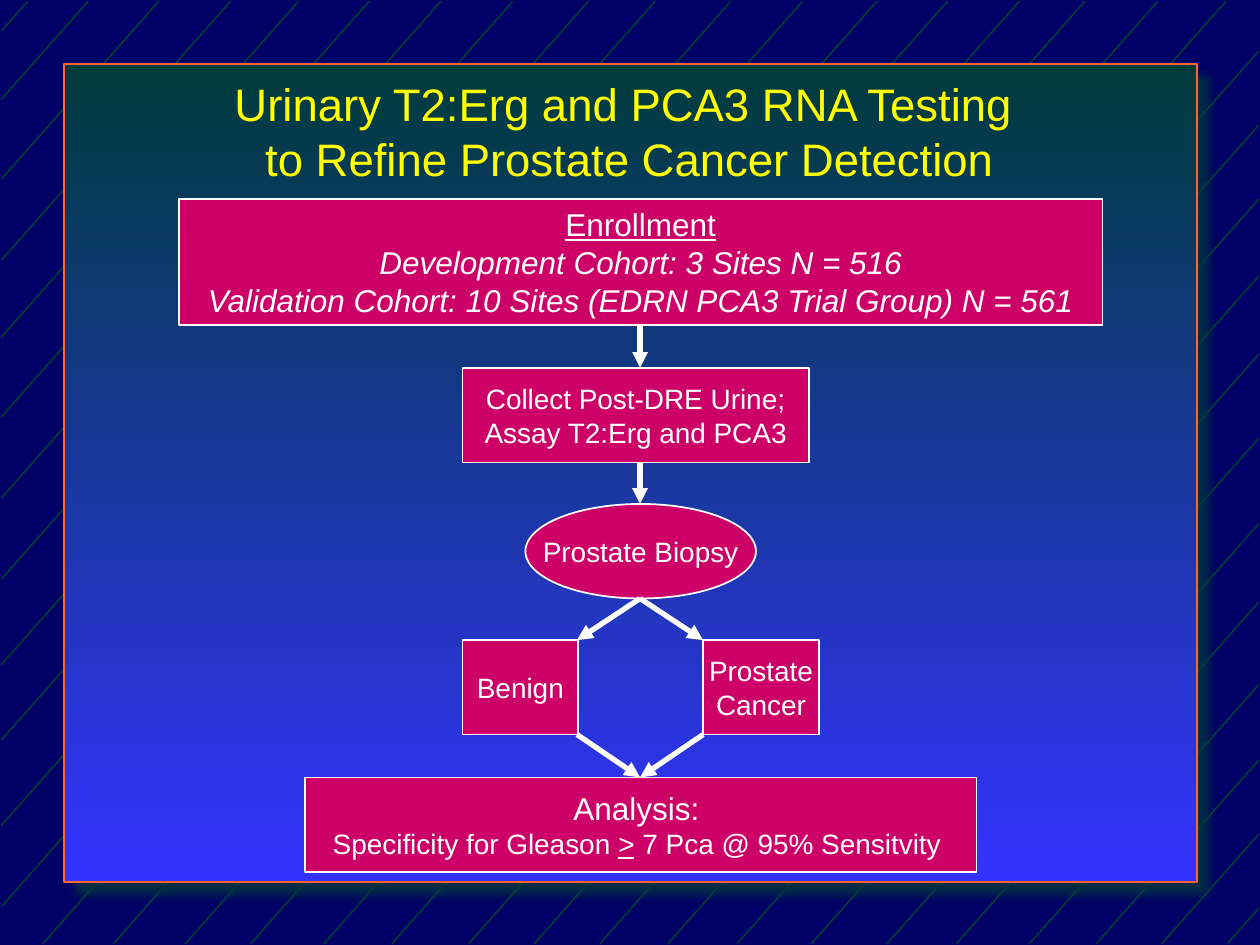
from dataclasses import dataclass

from lxml.etree import SubElement
from pptx import Presentation
from pptx.dml.color import RGBColor as RGB
from pptx.enum.shapes import MSO_CONNECTOR as CONN, MSO_SHAPE as SHAPE
from pptx.enum.text import MSO_ANCHOR as ANCHOR, PP_ALIGN as ALIGN
from pptx.oxml.ns import qn
from pptx.util import Inches, Pt


@dataclass(frozen=True)
class Theme:
    font: str = "Arial"
    navy: str = "000066"
    teal: str = "003B3B"
    blue: str = "3333FF"
    orange: str = "FF6633"
    yellow: str = "FFFF00"
    pink: str = "CC0066"
    white: str = "FFFFFF"
    title: int = 26
    large: int = 18
    body: int = 16
    thin: int = 1
    thick: int = 3


T = Theme()

# Where each hatch line meets the top edge, extended past the right side
HATCH_X = [0.22, 0.7, 1.26, 1.83, 2.37, 2.93, 3.5, 4.07, 4.67, 5.2,
           5.8, 6.37, 6.96, 7.52, 8.09, 8.61, 9.19, 9.73, 10.34, 10.86,
           11.38, 11.92, 12.47, 13.06, 13.66, 14.21, 14.79, 15.32, 15.84, 16.36]
HATCH_SLOPE = 1.13
EDGE, RIGHT, BOTTOM = 0.01, 9.99, 7.49


def add_line(slide, start, end, color, width, arrow=False):
    ends = [Inches(v) for v in (*start, *end)]
    line = slide.shapes.add_connector(CONN.STRAIGHT, *ends)
    line.line.color.rgb = RGB.from_string(color)
    line.line.width = Pt(width)
    spPr = line._element.spPr
    if arrow:
        SubElement(spPr.find(qn("a:ln")), qn("a:tailEnd"), type="triangle")
    SubElement(spPr, qn("a:effectLst"))


def add_hatching(slide):
    for x in HATCH_X:
        x1 = min(x, RIGHT)
        y1 = EDGE + (x - x1) * HATCH_SLOPE
        y2 = min(EDGE + (x - EDGE) * HATCH_SLOPE, BOTTOM)
        x2 = x - (y2 - EDGE) / HATCH_SLOPE
        add_line(slide, (x1, y1), (x2, y2), T.teal, T.thin)


def add_outlined(slide, kind, box, outline):
    sp = slide.shapes.add_shape(kind, *[Inches(v) for v in box])
    sp.line.color.rgb = RGB.from_string(outline)
    sp.line.width = Pt(T.thin)
    sp.shadow.inherit = False
    return sp


def add_panel(slide):
    sp = add_outlined(slide, SHAPE.RECTANGLE, (0.51, 0.51, 8.99, 6.49), T.orange)
    sp.fill.gradient()
    sp.fill.gradient_angle = 270
    for stop, color, pos in zip(sp.fill.gradient_stops, (T.teal, T.blue), (0, 1)):
        stop.color.rgb = RGB.from_string(color)
        stop.position = pos
    # Soft shadow to the lower right
    effects = sp._element.spPr.find(qn("a:effectLst"))
    shadow = SubElement(effects, qn("a:outerShdw"), blurRad=str(Pt(5)),
                        dist=str(Pt(9.9)), dir=str(45 * 60000),
                        algn="ctr", rotWithShape="0")
    color = SubElement(shadow, qn("a:srgbClr"), val=T.teal)
    SubElement(color, qn("a:alpha"), val="75000")


def write(tf, paragraphs, color):
    """Each paragraph is (size, run, ...); a run is (text, style letters)."""
    tf.vertical_anchor = ANCHOR.MIDDLE
    for i, (size, *runs) in enumerate(paragraphs):
        p = tf.add_paragraph() if i else tf.paragraphs[0]
        p.alignment = ALIGN.CENTER
        for text, style in runs:
            r = p.add_run()
            r.text = text
            r.font.name = T.font
            r.font.size = Pt(size)
            r.font.color.rgb = RGB.from_string(color)
            r.font.italic = "i" in style
            r.font.underline = "u" in style


def add_title(slide, *lines):
    box = [Inches(v) for v in (0.75, 0.5, 8.5, 1.08)]
    tf = slide.shapes.add_textbox(*box).text_frame
    tf.word_wrap = True
    write(tf, [(T.title, (line, "")) for line in lines], T.yellow)


def add_step(slide, box, *paragraphs, kind=SHAPE.RECTANGLE):
    sp = add_outlined(slide, kind, box, T.white)
    sp.fill.solid()
    sp.fill.fore_color.rgb = RGB.from_string(T.pink)
    sp.text_frame.word_wrap = False
    write(sp.text_frame, paragraphs, T.white)


def main():
    prs = Presentation()
    prs.slide_width, prs.slide_height = Inches(10), Inches(7.5)
    s = prs.slides.add_slide(prs.slide_layouts[6])

    # Backdrop
    s.background.fill.solid()
    s.background.fill.fore_color.rgb = RGB.from_string(T.navy)
    add_hatching(s)
    add_panel(s)
    add_title(s, "Urinary T2:Erg and PCA3 RNA Testing ",
              "to Refine Prostate Cancer Detection")

    # Study steps
    add_step(s, (1.42, 1.58, 7.33, 1),
             (T.large, ("Enrollment", "u")),
             (T.large, ("Development Cohort: 3 Sites N = 516", "i")),
             (T.large, ("Validation Cohort: 10 Sites (EDRN PCA3 Trial Group) N = 561", "i")))
    add_step(s, (3.67, 2.92, 2.75, 0.75),
             (T.body, ("Collect Post-DRE Urine;", "")),
             (T.body, ("Assay T2:Erg and PCA3", "")))
    add_step(s, (4.17, 4, 1.83, 0.75),
             (T.body, ("Prostate Biopsy", "")), kind=SHAPE.OVAL)
    add_step(s, (3.67, 5.08, 0.92, 0.75), (T.body, ("Benign", "")))
    add_step(s, (5.58, 5.08, 0.92, 0.75),
             (T.body, ("Prostate", "")), (T.body, ("Cancer", "")))
    add_step(s, (2.42, 6.17, 5.33, 0.75),
             (T.large, ("Analysis: ", "")),
             (T.body, ("Specificity for Gleason ", ""), (">", "u"),
              (" 7 Pca @ 95% Sensitvity ", "")))

    # Arrows down the middle, then out to both results and back
    mid = 5.08
    for top, bottom in ((2.58, 2.92), (3.67, 4)):
        add_line(s, (mid, top), (mid, bottom), T.white, T.thick, arrow=True)
    for side in (mid - 0.5, mid + 0.5):
        add_line(s, (mid, 4.75), (side, 5.08), T.white, T.thick, arrow=True)
        add_line(s, (side, 5.83), (mid, 6.17), T.white, T.thick, arrow=True)

    prs.save("out.pptx")


if __name__ == "__main__":
    main()
